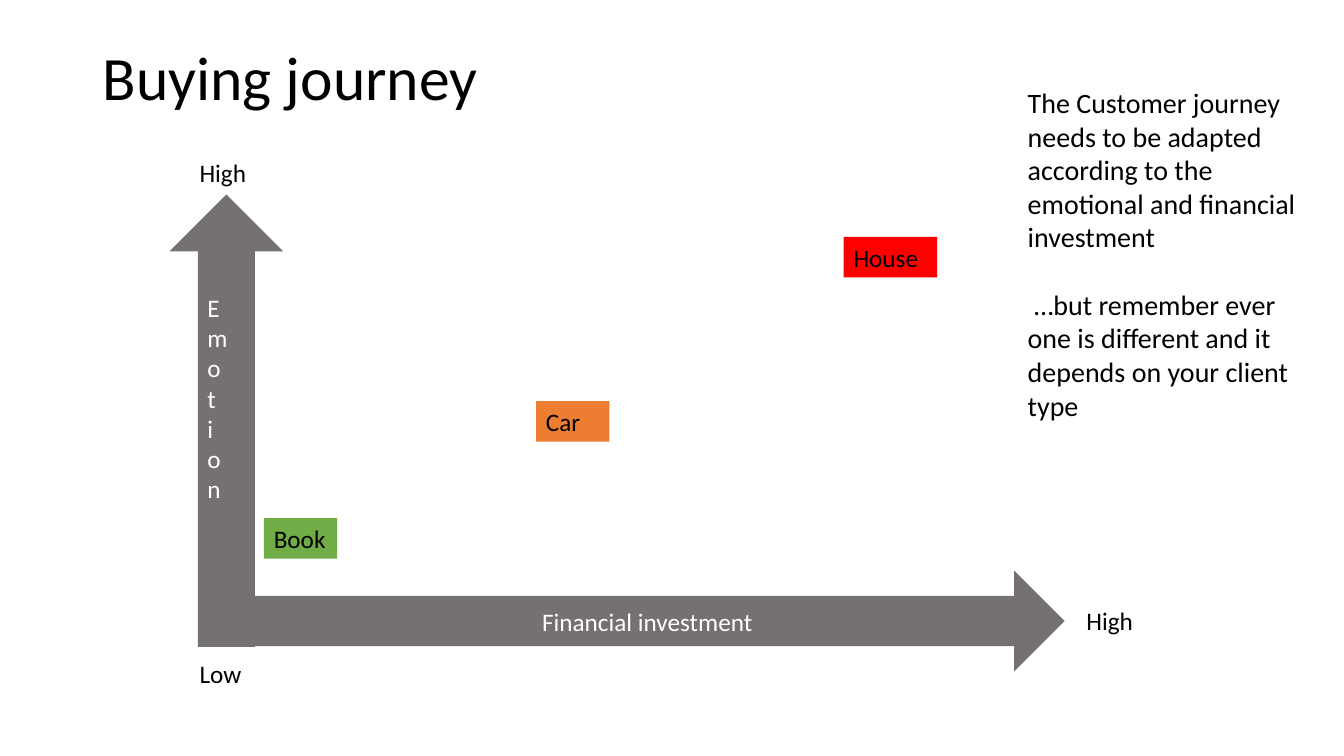
from pptx import Presentation
from pptx.dml.color import RGBColor
from pptx.enum.shapes import MSO_SHAPE
from pptx.enum.text import MSO_ANCHOR, PP_ALIGN
from pptx.util import Cm, Pt

RECTANGLE = MSO_SHAPE.RECTANGLE
UP_ARROW, RIGHT_ARROW = MSO_SHAPE.UP_ARROW, MSO_SHAPE.RIGHT_ARROW
TOP, MIDDLE = MSO_ANCHOR.TOP, MSO_ANCHOR.MIDDLE
LEFT, CENTER = PP_ALIGN.LEFT, PP_ALIGN.CENTER

FONT = "Calibri"
COLORS = {
    "text": "000000",
    "light": "FFFFFF",
    "axis": "767171",
    "low": "70AD47",
    "medium": "ED7D31",
    "high": "FF0000",
}
LABEL_WIDTH, LABEL_HEIGHT = 1.85, 1.02


def color(name):
    """Return the named colour."""
    return RGBColor.from_string(COLORS[name])


def write(shape, text, size=18, ink="text", align=LEFT, anchor=TOP):
    """Write and format the text of a shape."""
    frame = shape.text_frame
    frame.text = text
    frame.word_wrap = True
    frame.vertical_anchor = anchor
    for paragraph in frame.paragraphs:
        paragraph.alignment = align
        for span in paragraph.runs:
            span.font.name = FONT
            span.font.size = Pt(size)
            span.font.color.rgb = color(ink)
    return frame


def add_block(page, kind, box, fill):
    """Add a flat filled shape without outline."""
    block = page.shapes.add_shape(kind, *map(Cm, box))
    block.shadow.inherit = False
    block.fill.solid()
    block.fill.fore_color.rgb = color(fill)
    block.line.fill.background()
    return block


def add_label(page, box, text, size=18, ink="text"):
    """Add a text box and return its text frame."""
    return write(page.shapes.add_textbox(*map(Cm, box)), text, size, ink)


def add_title(page, box, text):
    """Place and format the title placeholder."""
    title = page.shapes.title
    title.left, title.top, title.width, title.height = map(Cm, box)
    frame = write(title, text, 44, anchor=MIDDLE)
    frame.paragraphs[0].line_spacing = 0.9


def add_journey_map(page, box):
    """Draw the two axes, their end labels and the purchases between them."""
    left, top, width, height = box
    add_block(page, UP_ARROW, (left, top + 1.06, 2.87, 11.4), "axis")
    emotion = add_label(page, (left + 0.71, top + 3.4, 1.42, 7.8), "Emotion", ink="light")
    emotion._txBody.bodyPr.set("vert", "wordArtVert")

    investment = add_block(page, RIGHT_ARROW, (left + 2.16, top + 10.54, 20.4, 2.54), "axis")
    write(investment, "Financial investment", ink="light", align=CENTER, anchor=MIDDLE)

    purchases = [
        ("Book", 2.38, 9.22, LABEL_WIDTH, "low"),
        ("Car", 9.24, 6.27, LABEL_WIDTH, "medium"),
        ("House", 16.99, 2.13, 2.36, "high"),
    ]
    for name, across, down, block_width, fill in purchases:
        block_box = (left + across, top + down, block_width, LABEL_HEIGHT)
        write(add_block(page, RECTANGLE, block_box, fill), name)

    axis_ends = [
        ("High", 0.51, 0),
        ("High", width - LABEL_WIDTH, 11.3),
        ("Low", 0.51, height - LABEL_HEIGHT),
    ]
    for name, across, down in axis_ends:
        add_label(page, (left + across, top + down, LABEL_WIDTH, LABEL_HEIGHT), name)


def add_advice(page, box):
    """Add the advice as two spaced paragraphs."""
    frame = add_label(
        page,
        box,
        "The Customer journey needs to be adapted according to the emotional "
        "and financial investment\n"
        " …but remember ever one is different and it depends on your client type",
        20,
    )
    frame.paragraphs[1].space_before = Pt(24)


def main():
    """Build and save the deck."""
    deck = Presentation()
    deck.slide_width, deck.slide_height = Cm(33.87), Cm(19.05)
    page = deck.slides.add_slide(deck.slide_layouts.get_by_name("Title Only"))
    add_title(page, (2.34, 1.02, 29.21, 2.03), "Buying journey")
    add_journey_map(page, (4.27, 3.84, 24.71, 13.64))
    add_advice(page, (25.65, 2.03, 7.57, 8.81))
    deck.save("out.pptx")


if __name__ == "__main__":
    main()
